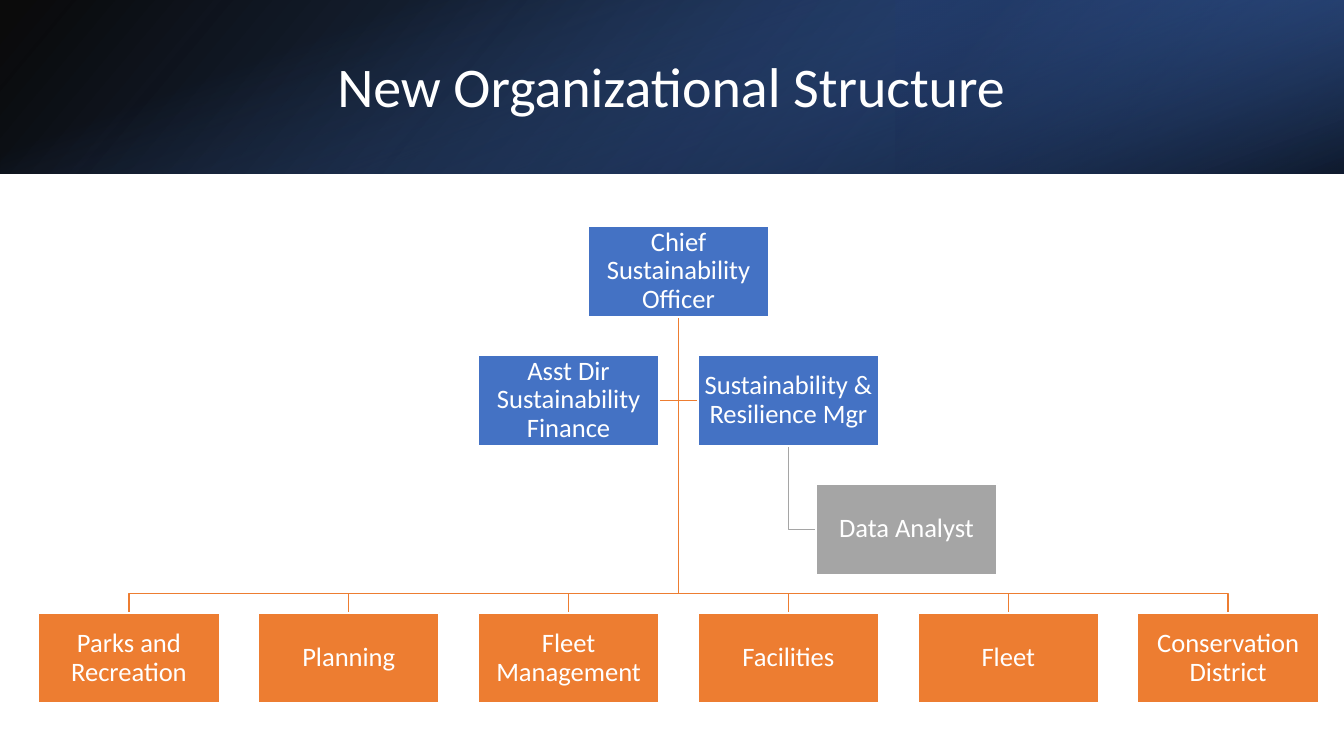
from lxml.etree import SubElement
from pptx import Presentation
from pptx.dml.color import RGBColor
from pptx.enum.shapes import MSO_SHAPE
from pptx.enum.text import MSO_ANCHOR, PP_ALIGN
from pptx.oxml.ns import qn
from pptx.util import Cm, Pt

TITLE = "New Organizational Structure"
BLUE, ORANGE, GRAY, WHITE = "4472C4", "ED7D31", "A5A5A5", "FFFFFF"
CHIEF = "Chief Sustainability Officer"
STAFF = ["Asst Dir Sustainability Finance", "Sustainability & Resilience Mgr"]
ANALYST = "Data Analyst"
UNITS = ["Parks and Recreation", "Planning", "Fleet Management",
         "Facilities", "Fleet", "Conservation District"]

# Banner layers: left, top, width, height, turn, flip, angle,
# then stops as (position, colour, opacity in percent)
WIDE, TALL, BAND = 33.87, 19.05, 4.38
LAYERS = [
    (0, 0, WIDE, BAND, 0, True, 140,
     [(0, "000000", 96), (1, "2F5597", 100)]),
    (22.58, 0, 11.29, BAND, 180, True, 320,
     [(0.19, "203864", 68), (1, BLUE, 79)]),
    ((WIDE - BAND) / 2, (BAND - WIDE) / 2, BAND, WIDE, 90, False, 340,
     [(0.23, BLUE, 0), (0.99, "000000", 74)]),
]

# Chart grid in cm
TRUNK, STEP = 17.1, 5.54
BOX_W, BOX_H = 4.57, 2.29
ROWS = [5.69 + 3.25 * i for i in range(4)]
BUS = ROWS[3] - 0.48
INDENT = 0.69


def color(code):
    return RGBColor.from_string(code)


def column(i):
    return TRUNK + (i - 2.5) * STEP


def layer(left, top, width, height, turn, flip, angle, stops):
    rect = slide.shapes.add_shape(MSO_SHAPE.RECTANGLE, Cm(left), Cm(top),
                                  Cm(width), Cm(height))
    rect.shadow.inherit = False
    rect.line.fill.background()
    rect.rotation = turn
    if flip:
        rect._element.spPr.xfrm.set("flipH", "1")
    rect.fill.gradient()
    rect.fill.gradient_angle = 360 - angle
    for stop, (place, code, _) in zip(rect.fill.gradient_stops, stops):
        stop.position = place
        stop.color.rgb = color(code)
    tints = rect._element.spPr.iter(qn("a:srgbClr"))
    for tint, (_, _, alpha) in zip(list(tints), stops):
        SubElement(tint, qn("a:alpha")).set("val", str(alpha * 1000))


def branch(code, *points):
    start, *rest = [(Cm(x), Cm(y)) for x, y in points]
    pen = slide.shapes.build_freeform(*start)
    pen.add_line_segments(rest, close=False)
    line = pen.convert_to_shape()
    line.shadow.inherit = False
    line.fill.background()
    line.line.color.rgb = color(code)
    line.line.width = Pt(1)


def box(label, mid, top, code):
    rect = slide.shapes.add_shape(MSO_SHAPE.RECTANGLE, Cm(mid - BOX_W / 2),
                                  Cm(top), Cm(BOX_W), Cm(BOX_H))
    rect.shadow.inherit = False
    rect.fill.solid()
    rect.fill.fore_color.rgb = color(code)
    rect.line.color.rgb = color(WHITE)
    rect.line.width = Pt(1.5)
    frame = rect.text_frame
    frame.margin_left = frame.margin_right = Cm(0.03)
    frame.margin_top = frame.margin_bottom = Cm(0.03)
    write(frame, label, 19)


def write(frame, label, size):
    frame.text = label
    frame.word_wrap = True
    frame.vertical_anchor = MSO_ANCHOR.MIDDLE
    para = frame.paragraphs[0]
    para.alignment = PP_ALIGN.CENTER
    para.line_spacing = 0.9
    para.font.name = "Calibri"
    para.font.size = Pt(size)
    para.font.color.rgb = color(WHITE)


deck = Presentation()
deck.slide_width, deck.slide_height = Cm(WIDE), Cm(TALL)
slide = deck.slides.add_slide(deck.slide_layouts[5])

# Banner, with the title brought in front of it
for item in LAYERS:
    layer(*item)
title = slide.shapes.title
slide.shapes._spTree.append(title._element)
title.left, title.top = Cm(2.97), Cm(1.04)
title.width, title.height = Cm(27.89), Cm(2.44)
write(title.text_frame, TITLE, 40)

# Branches
foot = (TRUNK, ROWS[0] + BOX_H)
desk = column(3)
seat = ROWS[2] + BOX_H / 2
branch(GRAY, (desk, ROWS[1] + BOX_H), (desk, seat), (desk + INDENT, seat))
level = ROWS[1] + BOX_H / 2
for side in (column(2) + BOX_W / 2, column(3) - BOX_W / 2):
    branch(ORANGE, foot, (TRUNK, level), (side, level))
for i in range(len(UNITS)):
    branch(ORANGE, foot, (TRUNK, BUS), (column(i), BUS), (column(i), ROWS[3]))

# Boxes
box(CHIEF, TRUNK, ROWS[0], BLUE)
for i, label in enumerate(STAFF, 2):
    box(label, column(i), ROWS[1], BLUE)
box(ANALYST, desk + INDENT + BOX_W / 2, ROWS[2], GRAY)
for i, label in enumerate(UNITS):
    box(label, column(i), ROWS[3], ORANGE)

deck.save("out.pptx")
